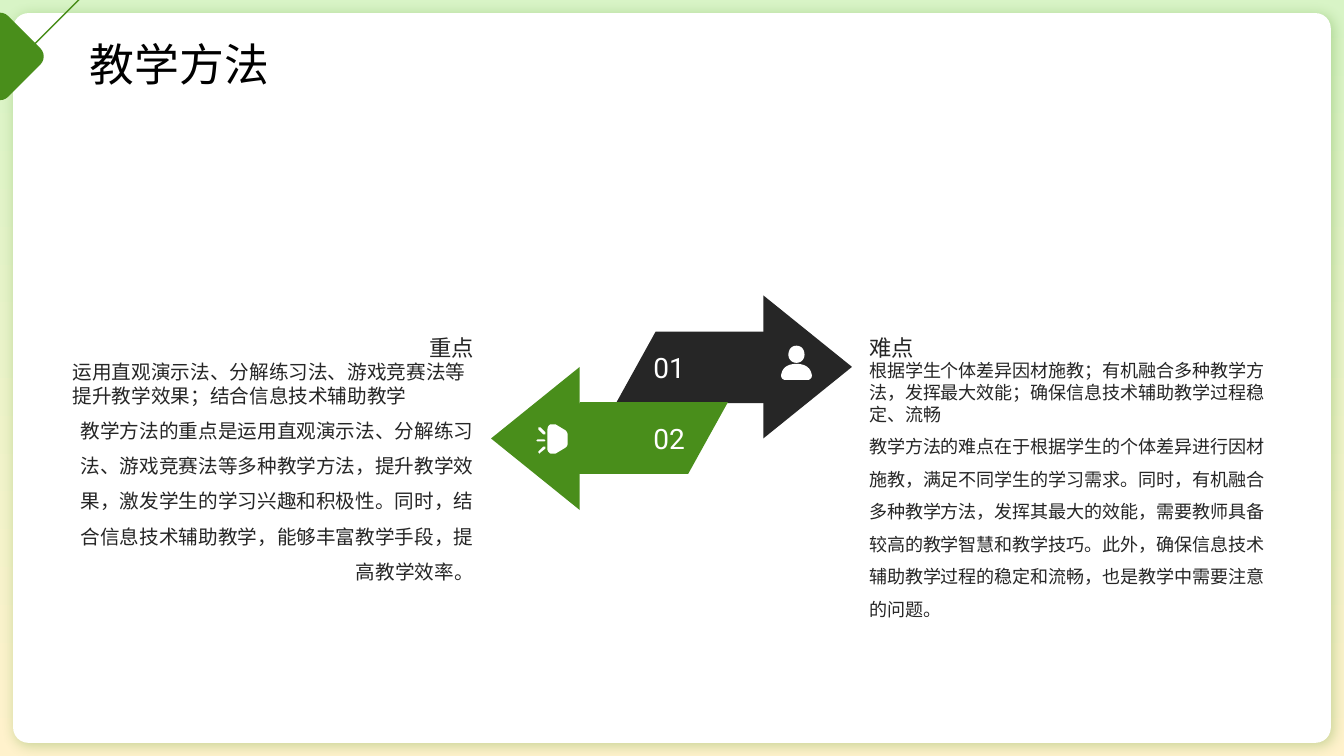
import pptx
import pptx.util
import pptx.oxml
import pptx.oxml.ns
import pptx.dml.color
import pptx.enum.shapes
import pptx.enum.text
from dataclasses import dataclass

Inches, Pt = pptx.util.Inches, pptx.util.Pt
SHAPE = pptx.enum.shapes.MSO_SHAPE
ALIGN = pptx.enum.text.PP_ALIGN
ANCHOR = pptx.enum.text.MSO_ANCHOR


@dataclass(frozen=True)
class Theme:
    green: str = "498E1B"
    dark: str = "262626"
    white: str = "FFFFFF"
    black: str = "000000"
    cream: str = "FFF2CC"
    mint: str = "D8F4C6"
    text_font: str = "Noto Sans CJK SC"
    number_font: str = "Roboto"
    title_size: float = 32
    number_size: float = 20
    heading_size: float = 16


THEME = Theme()

# Content
TITLE = "教学方法"
COLUMNS = [
    dict(left=8.62, heading="难点", align=ALIGN.LEFT, size=12.9,
         summary="根据学生个体差异因材施教；有机融合多种教学方法，发挥最大效能；确保信息技术辅助教学过程稳定、流畅",
         detail="教学方法的难点在于根据学生的个体差异进行因材施教，满足不同学生的学习需求。同时，有机融合多种教学方法，"
                "发挥其最大的效能，需要教师具备较高的教学智慧和教学技巧。此外，确保信息技术辅助教学过程的稳定和流畅，"
                "也是教学中需要注意的问题。"),
    dict(left=0.72, heading="重点", align=ALIGN.RIGHT, size=14,
         summary="运用直观演示法、分解练习法、游戏竞赛法等提升教学效果；结合信息技术辅助教学",
         detail="教学方法的重点是运用直观演示法、分解练习法、游戏竞赛法等多种教学方法，提升教学效果，激发学生的学习兴趣和"
                "积极性。同时，结合信息技术辅助教学，能够丰富教学手段，提高教学效率。"),
]
# number, colour, shaft left, shaft top, head left, head top, head rotation
ARROWS = [
    ("01", THEME.dark, 6.11, 3.29, 7.3, 3.2, 90),
    ("02", THEME.green, 5.36, 3.99, 4.6, 3.91, 270),
]

# Outlines: a start point, then line ends (x, y) or curves (two controls and an end)
PERSON = [
    [(7.9, 3.61), (7.8, 3.61, 7.76, 3.66, 7.75, 3.71), (7.74, 3.74, 7.76, 3.77, 7.79, 3.77),
     (8.01, 3.77), (8.04, 3.77, 8.06, 3.74, 8.05, 3.71), (8.04, 3.66, 8, 3.61, 7.9, 3.61)],
    [(7.9, 3.43), (7.85, 3.43, 7.82, 3.47, 7.82, 3.52), (7.82, 3.56, 7.85, 3.6, 7.9, 3.6),
     (7.95, 3.6, 7.98, 3.56, 7.98, 3.52), (7.98, 3.47, 7.95, 3.43, 7.9, 3.43)],
]
LAMP = [
    [(5.39, 4.43), (5.34, 4.48), (5.34, 4.49), (5.35, 4.5), (5.36, 4.49), (5.41, 4.45),
     (5.41, 4.43)],
    [(5.33, 4.36), (5.32, 4.37), (5.33, 4.38), (5.4, 4.38), (5.41, 4.37), (5.4, 4.36)],
    [(5.35, 4.24), (5.34, 4.24), (5.34, 4.26), (5.39, 4.31), (5.41, 4.31), (5.41, 4.29),
     (5.36, 4.24)],
    [(5.48, 4.21), (5.47, 4.21, 5.47, 4.21, 5.46, 4.21), (5.44, 4.22, 5.43, 4.24, 5.43, 4.26),
     (5.43, 4.46), (5.43, 4.47, 5.44, 4.49, 5.46, 4.5), (5.47, 4.5, 5.49, 4.5, 5.51, 4.5),
     (5.61, 4.44), (5.62, 4.43, 5.63, 4.42, 5.63, 4.4), (5.63, 4.31),
     (5.63, 4.3, 5.62, 4.28, 5.61, 4.27), (5.51, 4.21), (5.5, 4.21, 5.49, 4.21, 5.48, 4.21)],
]
CORNER = [
    [(0.06, 0.6), (0.14, 0.6, 0.21, 0.57, 0.27, 0.51), (0.83, -0.05), (-0.71, -0.05),
     (-0.14, 0.51), (-0.09, 0.57, -0.01, 0.6, 0.06, 0.6)],
]


def rgb(code):
    return pptx.dml.color.RGBColor.from_string(code)


def paint(shape, fill=None, line=None):
    shape.shadow.inherit = False
    if fill:
        shape.fill.solid()
        shape.fill.fore_color.rgb = rgb(fill)
    else:
        shape.fill.background()
    if line:
        shape.line.color.rgb = rgb(line)
        shape.line.width = Pt(1)
    else:
        shape.line.fill.background()
    return shape


def add_preset(page, kind, left, top, width, height, fill=None, rotation=0, adjust=None):
    shape = page.shapes.add_shape(kind, Inches(left), Inches(top), Inches(width), Inches(height))
    shape.rotation = rotation
    if adjust is not None:
        shape.adjustments[0] = adjust
    return paint(shape, fill)


def flatten(contour, steps=8):
    """Turn lines and cubic curves into a list of points."""
    points = [contour[0]]
    for piece in contour[1:]:
        if len(piece) == 2:
            points.append(piece)
            continue
        knots = [points[-1], piece[0:2], piece[2:4], piece[4:6]]
        for step in range(1, steps + 1):
            t = step / steps
            weights = ((1 - t) ** 3, 3 * t * (1 - t) ** 2, 3 * t * t * (1 - t), t ** 3)
            points.append(tuple(sum(w * knot[axis] for w, knot in zip(weights, knots))
                                for axis in (0, 1)))
    return [(Inches(x), Inches(y)) for x, y in points]


def add_outline(page, contours, **colours):
    outlines = [flatten(contour) for contour in contours]
    builder = page.shapes.build_freeform(*outlines[0][0], scale=1.0)
    for index, points in enumerate(outlines):
        if index:
            builder.move_to(*points[0])
        builder.add_line_segments(points[1:], close=True)
    return paint(builder.convert_to_shape(), **colours)


def write(box, *lines, size, color=THEME.dark, font=THEME.text_font, anchor=ANCHOR.TOP):
    """Fill a box with (text, alignment, line spacing) paragraphs."""
    frame = box.text_frame
    frame.word_wrap = True
    frame.auto_size = pptx.enum.text.MSO_AUTO_SIZE.NONE
    frame.vertical_anchor = anchor
    frame.margin_left = frame.margin_right = frame.margin_top = frame.margin_bottom = 0
    for index, (text, align, spacing) in enumerate(lines):
        para = frame.add_paragraph() if index else frame.paragraphs[0]
        para.alignment, para.line_spacing = align, spacing
        para.space_before = para.space_after = Pt(0)
        span = para.add_run()
        span.text = text
        span.font.size, span.font.name = Pt(size), font
        span.font.color.rgb = rgb(color)
        east = span.font._element.makeelement(pptx.oxml.ns.qn("a:ea"), {"typeface": font})
        span.font._element.find(pptx.oxml.ns.qn("a:latin")).addnext(east)


def add_text(page, left, top, width, height, *lines, **style):
    box = page.shapes.add_textbox(Inches(left), Inches(top), Inches(width), Inches(height))
    write(box, *lines, **style)


def add_glow(shape, color):
    effects = shape._element.spPr.find(pptx.oxml.ns.qn("a:effectLst"))
    effects.append(pptx.oxml.parse_xml(
        f'<a:outerShdw {pptx.oxml.ns.nsdecls("a")} blurRad="{Pt(10)}" dist="{Pt(3)}" dir="2700000"'
        f' algn="tl" rotWithShape="0"><a:srgbClr val="{color}"><a:alpha val="30000"/></a:srgbClr>'
        '</a:outerShdw>'))


def main():
    deck = pptx.Presentation()
    deck.slide_width, deck.slide_height = Inches(13.33), Inches(7.5)
    page = deck.slides.add_slide(deck.slide_layouts[5])

    # Backdrop and card
    backdrop = add_preset(page, SHAPE.RECTANGLE, 0, 0, 13.33, 7.5)
    backdrop.fill.gradient()
    backdrop.fill.gradient_angle = 90
    for stop, color in zip(backdrop.fill.gradient_stops, (THEME.cream, THEME.mint)):
        stop.color.rgb = rgb(color)
    card = add_preset(page, SHAPE.ROUNDED_RECTANGLE, 0.13, 0.13, 13.07, 7.24, THEME.white,
                      adjust=0.021)
    add_glow(card, THEME.green)

    # Arrows with numbers and icons
    for number, color, left, top, head_left, head_top, rotation in ARROWS:
        add_preset(page, SHAPE.PARALLELOGRAM, left, top, 1.86, 0.71, color, adjust=0.554)
        add_preset(page, SHAPE.ISOSCELES_TRIANGLE, head_left, head_top, 1.42, 0.88, color,
                   rotation=rotation)
        add_text(page, 6.48, head_top + 0.21, 0.47, 0.4, (number, ALIGN.LEFT, 1.5),
                 color=THEME.white, size=THEME.number_size, font=THEME.number_font,
                 anchor=ANCHOR.BOTTOM)
    for icon in (PERSON, LAMP):
        add_outline(page, icon, fill=THEME.white)

    # Text columns
    for column in COLUMNS:
        add_text(page, column["left"], 1.92, 3.98, 1.66, (column["heading"], column["align"], 1.1),
                 size=THEME.heading_size, anchor=ANCHOR.BOTTOM)
        add_text(page, column["left"], 3.57, 3.98, 2.42, (column["summary"], ALIGN.LEFT, 1.0),
                 (column["detail"], column["align"], 1.5), size=column["size"])

    # Corner ornament
    add_outline(page, CORNER, line=THEME.green)
    add_preset(page, SHAPE.ROUNDED_RECTANGLE, -0.34, 0.22, 0.68, 0.68, THEME.green, rotation=45)

    # Title, brought to the front
    title = page.shapes.title
    title.left, title.top, title.width, title.height = map(Inches, (0.89, 0.26, 8.51, 0.47))
    write(title, (TITLE, ALIGN.LEFT, 1.5), size=THEME.title_size, color=THEME.black,
          anchor=ANCHOR.MIDDLE)
    page.shapes._spTree.append(title._element)

    deck.save("out.pptx")


if __name__ == "__main__":
    main()
